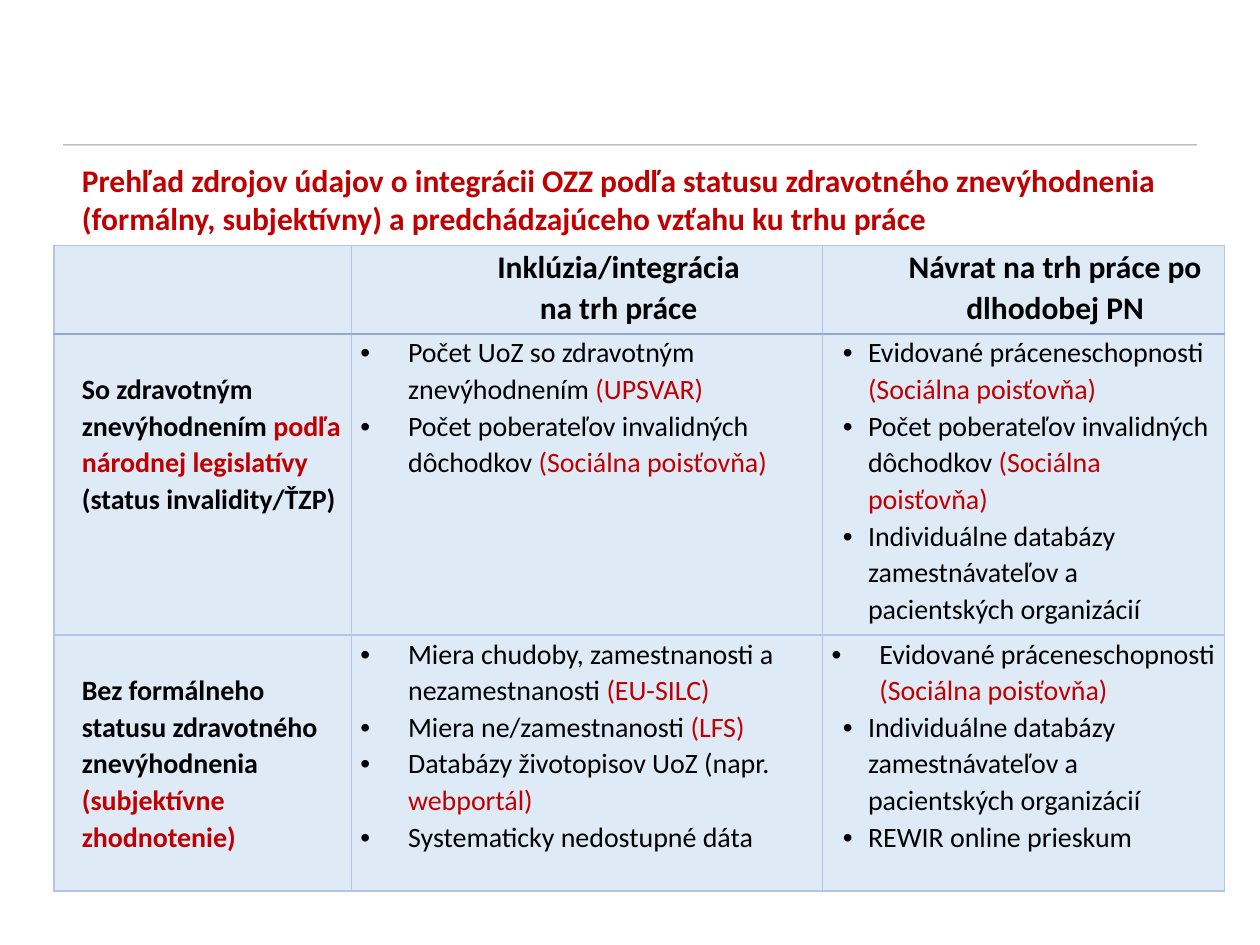
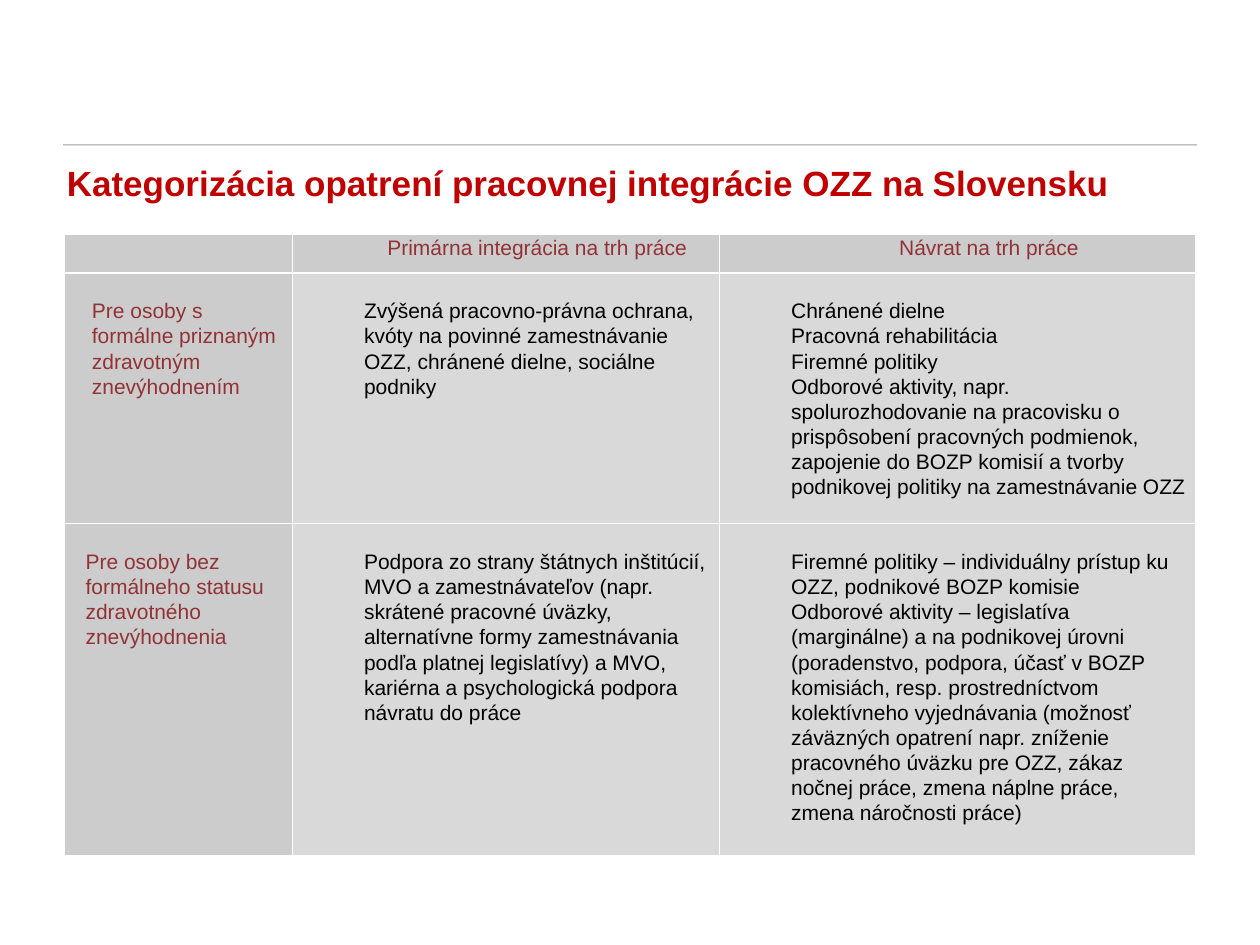
"""Builds two slides that compare data sources and measures in ruled tables."""
from typing import NamedTuple

from lxml import etree
from pptx import Presentation, util as u
from pptx.dml.color import RGBColor
from pptx.enum import shapes, text
from pptx.oxml import ns

RED = RGBColor(0xC0, 0x00, 0x00)
WINE = RGBColor(0x92, 0x32, 0x36)
BLACK = RGBColor(0x00, 0x00, 0x00)
WHITE = RGBColor(0xFF, 0xFF, 0xFF)
PALE = RGBColor(0xDE, 0xEA, 0xF6)
SKY = RGBColor(0xB4, 0xC6, 0xE7)
BLUE = RGBColor(0x8E, 0xAA, 0xDB)
GREY = RGBColor(0xCC, 0xCC, 0xCC)
SILVER = RGBColor(0xD9, 0xD9, 0xD9)

COLS, ROWS = 100, 75
WIDTH, HEIGHT = u.Inches(10), u.Inches(7.5)
LEFT, CENTER = text.PP_ALIGN.LEFT, text.PP_ALIGN.CENTER


class Form(NamedTuple):
    """Paragraph indents in grid columns, bullet and alignment."""
    left: float
    first: float = 0
    bullet: str = ""
    align: text.PP_ALIGN = LEFT


class Item(NamedTuple):
    """One paragraph; parts between asterisks are red."""
    words: str
    form: Form


class Edge(NamedTuple):
    """A cell border."""
    ink: RGBColor
    points: float


class Look(NamedTuple):
    """Fonts, fills and borders of one slide's table."""
    font: str
    head_size: int
    size: int
    bold: bool
    ink: RGBColor
    side: RGBColor
    body: RGBColor
    edge: Edge
    rule: Edge
    side_gap: float
    body_gap: float


class Title(NamedTuple):
    """Heading text with its box in grid units."""
    words: str
    size: int
    box: tuple[float, float, float, float]


class Grid(NamedTuple):
    """Table origin, column widths, row heights and cells."""
    left: float
    top: float
    cols: tuple[float, ...]
    rows: tuple[float, ...]
    cells: list[list[list[Item]]]


HEAD = Form(5, align=CENTER)
WIDE = Form(3.8, -3.8, "•")
NEAR = Form(2.9, -2, "•")
SIDE = Form(1.5)
SLIM = Form(1)
PLAIN = Form(5)


def across(cols: float) -> int:
    """Turn grid columns into a length."""
    return round(WIDTH * cols / COLS)


def down(rows: float) -> int:
    """Turn grid rows into a length."""
    return round(HEIGHT * rows / ROWS)


def items(form: Form, *words: str) -> list[Item]:
    """Give several paragraphs the same form."""
    return [Item(word, form) for word in words]


def style(para, font: str, size: int, bold: bool, ink: RGBColor) -> None:
    """Set the font of a whole paragraph."""
    para.font.name, para.font.size = font, u.Pt(size)
    para.font.bold = bold
    para.font.color.rgb = ink


def write(para, item: Item) -> None:
    """Add an item's indents, bullet and coloured runs."""
    form = item.form
    para.alignment, para.line_spacing = form.align, 1.07
    props = para._p.get_or_add_pPr()
    props.set("marL", str(across(form.left)))
    props.set("indent", str(across(form.first)))
    if form.bullet:
        etree.SubElement(props, ns.qn("a:buFont"), typeface="Arial")
        etree.SubElement(props, ns.qn("a:buChar"), char=form.bullet)
    for place, part in enumerate(item.words.split("*")):
        if part:
            run = para.add_run()
            run.text = part
            if place % 2:
                run.font.color.rgb = RED


def border(cell, edges: dict[str, Edge]) -> None:
    """Draw the four borders of a cell."""
    props = cell._tc.get_or_add_tcPr()
    for name, edge in edges.items():
        line = etree.SubElement(props, ns.qn(f"a:{name}"), w=str(u.Pt(edge.points)))
        fill = etree.SubElement(line, ns.qn("a:solidFill"))
        etree.SubElement(fill, ns.qn("a:srgbClr"), val=str(edge.ink))


def add_rule(slide) -> None:
    """Draw the faint line above the title."""
    line = slide.shapes.add_connector(shapes.MSO_CONNECTOR.STRAIGHT, across(5),
                                      down(11.5), across(95), down(11.5))
    line.line.width = u.Pt(0.5)
    line.line.color.rgb = BLACK
    props = line._element.spPr
    tint = props.find(".//" + ns.qn("a:srgbClr"))
    etree.SubElement(tint, ns.qn("a:alpha"), val="40000")
    etree.SubElement(props, ns.qn("a:effectLst"))


def add_title(slide, title: Title, font: str) -> None:
    """Place and format the title."""
    shape = slide.shapes.title
    left, top, wide, high = title.box
    shape.left, shape.top = across(left), down(top)
    shape.width, shape.height = across(wide), down(high)
    frame = shape.text_frame
    frame.text = title.words
    frame.word_wrap, frame.auto_size = True, text.MSO_AUTO_SIZE.NONE
    frame.vertical_anchor = text.MSO_ANCHOR.TOP
    para = frame.paragraphs[0]
    para.alignment = LEFT
    style(para, font, title.size, True, RED)


def fill_cell(cell, row: int, col: int, lines: list[Item], look: Look) -> None:
    """Format one table cell and write its paragraphs."""
    head, side = row == 0, col == 0
    border(cell, {"lnL": look.edge, "lnR": look.edge,
                  "lnT": look.rule if row == 1 else look.edge,
                  "lnB": look.rule if head else look.edge})
    cell.fill.solid()
    cell.fill.fore_color.rgb = look.side if head or side else look.body
    cell.margin_left = cell.margin_right = across(0.7)
    gap = look.side_gap if side else look.body_gap
    cell.margin_top, cell.margin_bottom = down(0 if head else gap), 0
    frame = cell.text_frame
    for place, item in enumerate(lines):
        para = frame.add_paragraph() if place else frame.paragraphs[0]
        write(para, item)
        style(para, look.font, look.head_size if head else look.size,
              look.bold and (head or side), look.ink if head or side else BLACK)


def add_grid(slide, grid: Grid, look: Look) -> None:
    """Add the table and fill its cells."""
    table = slide.shapes.add_table(
        len(grid.rows), len(grid.cols), across(grid.left), down(grid.top),
        across(sum(grid.cols)), down(sum(grid.rows))).table
    table.horz_banding = False
    for col, wide in zip(table.columns, grid.cols):
        col.width = across(wide)
    for row, high in zip(table.rows, grid.rows):
        row.height = down(high)
    for row, line in enumerate(grid.cells):
        for col, lines in enumerate(line):
            fill_cell(table.cell(row, col), row, col, lines, look)


SOURCES = (
    Title("Prehľad zdrojov údajov o integrácii OZZ podľa statusu zdravotného "
          "znevýhodnenia (formálny, subjektívny) a predchádzajúceho vzťahu ku trhu práce",
          18, (5.5, 12.3, 87.6, 7.1)),
    Grid(4.3, 19.5, (23.6, 37.4, 31.9), (7, 23.9, 20.3), [
        [[], items(HEAD, "Inklúzia/integrácia", "na trh práce"),
         items(HEAD, "Návrat na trh práce po dlhodobej PN")],
        [items(SIDE, "So zdravotným znevýhodnením *podľa národnej legislatívy "
                     "*(status invalidity/ŤZP)"),
         items(WIDE, "Počet UoZ so zdravotným znevýhodnením *(UPSVAR)*",
               "Počet poberateľov invalidných dôchodkov *(Sociálna poisťovňa)*"),
         items(NEAR, "Evidované práceneschopnosti *(Sociálna poisťovňa)*",
               "Počet poberateľov invalidných dôchodkov *(Sociálna poisťovňa)*",
               "Individuálne databázy zamestnávateľov a pacientských organizácií")],
        [items(SIDE, "Bez formálneho statusu zdravotného znevýhodnenia "
                     "*(subjektívne zhodnotenie)*"),
         items(WIDE, "Miera chudoby, zamestnanosti a nezamestnanosti *(EU-SILC)*",
               "Miera ne/zamestnanosti *(LFS)*",
               "Databázy životopisov UoZ (napr. *webportál)*",
               "Systematicky nedostupné dáta"),
         items(WIDE, "Evidované práceneschopnosti *(Sociálna poisťovňa)*")
         + items(NEAR, "Individuálne databázy zamestnávateľov a pacientských organizácií",
                 "REWIR online prieskum")],
    ]),
    Look("Calibri", 18, 16, True, BLACK, PALE, PALE, Edge(SKY, 1), Edge(BLUE, 1.5), 2.9, 0),
)

MEASURES = (
    Title("Kategorizácia opatrení pracovnej integrácie OZZ na Slovensku",
          20, (4.3, 12.3, 90.6, 4.4)),
    Grid(5.1, 18.6, (18.1, 33.9, 37.8), (2.5, 19.9, 26.4), [
        [[], items(HEAD, "Primárna integrácia na trh práce"),
         items(HEAD, "Návrat na trh práce")],
        [items(SIDE, "Pre osoby s formálne priznaným zdravotným znevýhodnením"),
         items(PLAIN, "Zvýšená pracovno-právna ochrana, kvóty na povinné zamestnávanie "
                      "OZZ, chránené dielne, sociálne podniky"),
         items(PLAIN, "Chránené dielne", "Pracovná rehabilitácia", "Firemné politiky",
               "Odborové aktivity, napr. spolurozhodovanie na pracovisku "
               "o prispôsobení pracovných podmienok, zapojenie do BOZP komisií "
               "a tvorby podnikovej politiky na zamestnávanie OZZ")],
        [items(SLIM, "Pre osoby bez formálneho statusu zdravotného znevýhodnenia"),
         items(PLAIN, "Podpora zo strany štátnych inštitúcií, MVO a zamestnávateľov "
                      "(napr. skrátené pracovné úväzky, alternatívne formy zamestnávania "
                      "podľa platnej legislatívy) a MVO, kariérna a psychologická "
                      "podpora návratu do práce"),
         items(PLAIN, "Firemné politiky – individuálny prístup ku OZZ, podnikové BOZP komisie",
               "Odborové aktivity – legislatíva (marginálne) a na podnikovej úrovni "
               "(poradenstvo, podpora, účasť v BOZP komisiách, resp. prostredníctvom "
               "kolektívneho vyjednávania (možnosť záväzných opatrení napr. zníženie "
               "pracovného úväzku pre OZZ, zákaz nočnej práce, zmena náplne práce, "
               "zmena náročnosti práce)")],
    ]),
    Look("Arial", 12, 12, False, WINE, GREY, SILVER, Edge(WHITE, 1), Edge(WHITE, 1), 2, 2),
)


def main() -> None:
    """Build and save the deck."""
    deck = Presentation()
    deck.slide_width, deck.slide_height = WIDTH, HEIGHT
    for title, grid, look in (SOURCES, MEASURES):
        slide = deck.slides.add_slide(deck.slide_layouts[5])
        add_rule(slide)
        add_grid(slide, grid, look)
        add_title(slide, title, look.font)
    deck.save("out.pptx")


if __name__ == "__main__":
    main()
